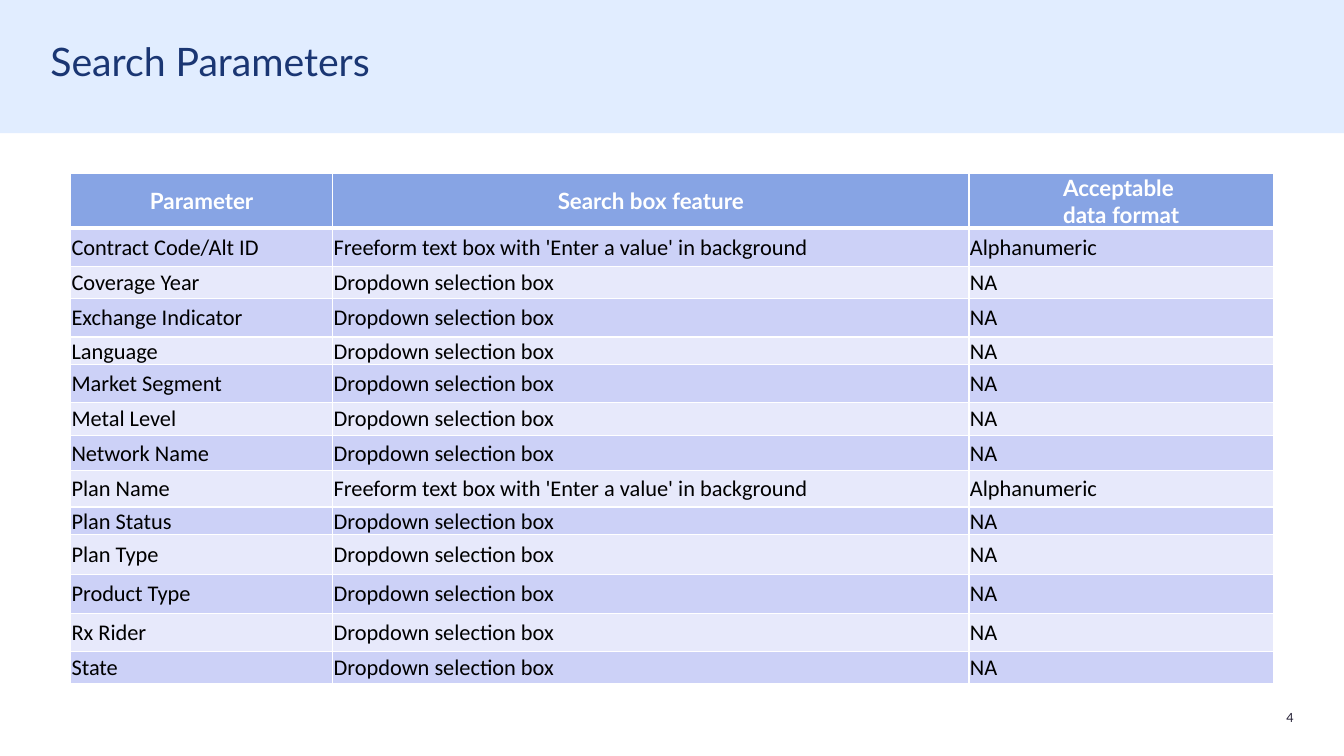
from lxml.etree import SubElement
from pptx import Presentation
from pptx.dml.color import RGBColor
from pptx.enum.shapes import MSO_SHAPE
from pptx.enum.text import MSO_ANCHOR, PP_ALIGN
from pptx.oxml.ns import qn
from pptx.util import Inches, Pt

NAVY = RGBColor(0x1A, 0x36, 0x73)
INK = RGBColor(0x23, 0x1E, 0x33)
BLACK = RGBColor(0, 0, 0)
WHITE = RGBColor(0xFF, 0xFF, 0xFF)
PALE = RGBColor(0xE1, 0xED, 0xFF)
BLUE = RGBColor(0x87, 0xA4, 0xE4)
BANDS = [RGBColor(0xCC, 0xD1, 0xF7), RGBColor(0xE7, 0xE9, 0xFB)]

HEAD = ["Parameter", "Search box feature", "Acceptable \ndata format"]
FREE = ["Freeform text box with 'Enter a value' in background", "Alphanumeric"]
DROP = ["Dropdown selection box", "NA"]
PARAMS = [
    "Contract Code/Alt ID", "Coverage Year", "Exchange Indicator", "Language",
    "Market Segment", "Metal Level", "Network Name", "Plan Name",
    "Plan Status", "Plan Type", "Product Type", "Rx Rider", "State",
]
TYPED = {"Contract Code/Alt ID", "Plan Name"}
WIDTHS = [2.6, 6.31, 3.02]
HEIGHTS = [0.53, 0.38, 0.32, 0.38, 0.27, 0.37, 0.33,
           0.35, 0.36, 0.27, 0.39, 0.39, 0.38, 0.32]

TITLE = {"name": "Lato", "size": Pt(28), "bold": False}
NUMBER = {"name": "Lato", "size": Pt(9), "bold": False}
HEADER = {"name": "Lato", "size": Pt(16), "bold": True}
BODY = {"name": "Calibri", "size": Pt(16), "bold": False}


def apply(item, values):
    """Set each named value on the item."""
    for key, value in values.items():
        setattr(item, key, value)


def write(frame, text, font, color, align=PP_ALIGN.LEFT, space=1.0):
    """Fill a text frame with one paragraph per line of text."""
    frame.text = text
    for para in frame.paragraphs:
        apply(para, {"alignment": align, "line_spacing": space})
        for run in para.runs:
            apply(run.font, font)
            run.font.color.rgb = color


def add_band(slide):
    """Draw the pale band behind the title."""
    band = slide.shapes.add_shape(
        MSO_SHAPE.RECTANGLE, 0, 0, Inches(13.33), Inches(1.32))
    band.shadow.inherit = False
    band.fill.solid()
    band.fill.fore_color.rgb = PALE
    band.line.fill.background()


def add_label(slide, box, anchor, *style):
    """Add a text box without insets."""
    frame = slide.shapes.add_textbox(*map(Inches, box)).text_frame
    apply(frame, {"word_wrap": True, "vertical_anchor": anchor,
                  "margin_left": 0, "margin_right": 0,
                  "margin_top": 0, "margin_bottom": 0})
    write(frame, *style)


def add_edges(cell, sides):
    """Give the cell white borders of the given point widths."""
    props = cell._tc.get_or_add_tcPr()
    for side, width in sides.items():
        line = SubElement(props, qn("a:ln" + side), w=str(Pt(width)))
        fill = SubElement(line, qn("a:solidFill"))
        SubElement(fill, qn("a:srgbClr"), val=str(WHITE))


def style_cell(cell, text, row):
    """Write and colour a cell by its row."""
    apply(cell, {"vertical_anchor": MSO_ANCHOR.MIDDLE,
                 "margin_left": Inches(0.01), "margin_right": Inches(0.01),
                 "margin_top": Inches(0.01), "margin_bottom": 0})
    add_edges(cell, {"L": 1, "R": 1, "T": 3 if row == 1 else 1,
                     "B": 1 if row else 3})
    cell.fill.solid()
    cell.fill.fore_color.rgb = BANDS[(row - 1) % 2] if row else BLUE
    if row:
        write(cell.text_frame, text, BODY, BLACK)
    else:
        write(cell.text_frame, text, HEADER, WHITE, PP_ALIGN.CENTER)


def add_grid(slide):
    """Build the table of search parameters."""
    rows = [HEAD] + [[name] + (FREE if name in TYPED else DROP)
                     for name in PARAMS]
    table = slide.shapes.add_table(
        len(rows), len(HEAD), Inches(0.7), Inches(1.72),
        Inches(sum(WIDTHS)), Inches(sum(HEIGHTS))).table
    for column, width in zip(table.columns, WIDTHS):
        column.width = Inches(width)
    for row, height in zip(table.rows, HEIGHTS):
        row.height = Inches(height)
    for r, texts in enumerate(rows):
        for c, text in enumerate(texts):
            style_cell(table.cell(r, c), text, r)


def main():
    """Build and save the slide."""
    deck = Presentation()
    apply(deck, {"slide_width": Inches(13.33), "slide_height": Inches(7.5)})
    slide = deck.slides.add_slide(deck.slide_layouts[6])
    add_band(slide)
    add_label(slide, (0.5, 0.42, 12.33, 0.9), MSO_ANCHOR.TOP,
              "Search Parameters", TITLE, NAVY, PP_ALIGN.LEFT, 0.9)
    add_grid(slide)
    add_label(slide, (12.42, 7.04, 0.41, 0.15), MSO_ANCHOR.BOTTOM,
              "4", NUMBER, INK, PP_ALIGN.RIGHT)
    deck.save("out.pptx")


if __name__ == "__main__":
    main()
